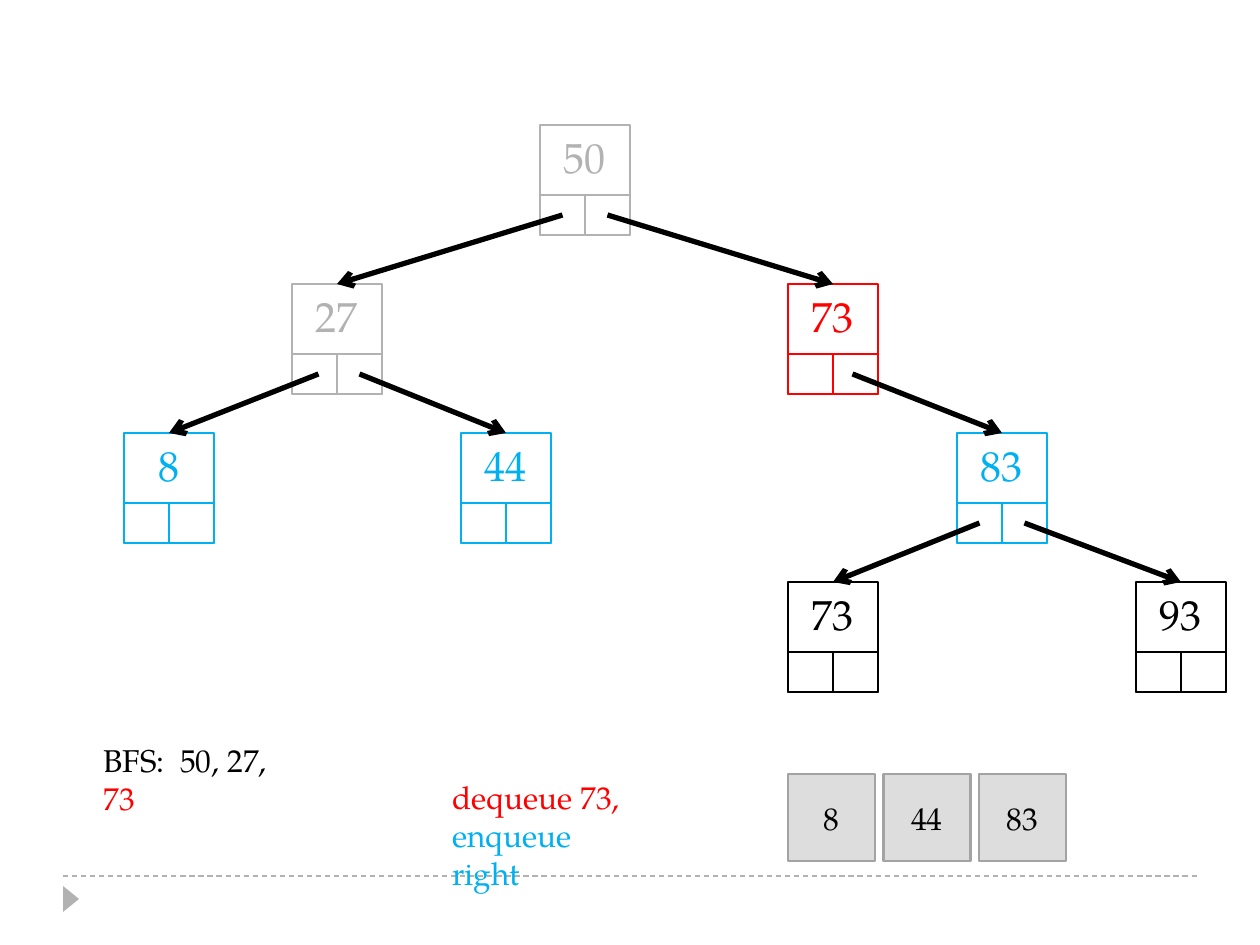
"""Build a slide showing one step of a breadth-first search with its queue."""
import pptx
import pptx.dml.color
import pptx.enum.dml
import pptx.enum.shapes
import pptx.enum.text
import pptx.oxml
import pptx.util

COLORS = {
    "visited": "B2B2B2", "current": "FF0000", "queued": "00B0F0", "waiting": "000000",
    "ink": "000000", "queue_fill": "DDDDDD", "queue_line": "A3A3A3", "footer": "B2B2B2",
}
FONT = "TeX Gyre Pagella"
NODES = {
    "root": ("50", 540, 125, "visited"),
    "left": ("27", 292, 284, "visited"),
    "right": ("73", 788, 284, "current"),
    "left_left": ("8", 124, 433, "queued"),
    "left_right": ("44", 461, 433, "queued"),
    "right_right": ("83", 957, 433, "queued"),
    "leaf_left": ("73", 788, 582, "waiting"),
    "leaf_right": ("93", 1136, 582, "waiting"),
}
LINKS = [
    ("root", 0, "left", 0), ("root", 1, "right", 0),
    ("left", 0, "left_left", 4), ("left", 1, "left_right", 0),
    ("right_right", 0, "leaf_left", 0), ("right", 1, "right_right", -3),
    ("right_right", 1, "leaf_right", 0),
]
QUEUE = ["8", "44", "83"]
NOTES = [
    ((91, 735, 227, 50), [[("BFS:  50, 27, ", "ink"), ("73", "current")]]),
    ((440, 772, 217, 89), [[("dequeue 73,", "current")], [("enqueue right", "queued")]]),
]
NODE_W, NODE_H, POINTER_W, POINTER_H = 90, 110, 45, 40
QUEUE_X, QUEUE_Y, QUEUE_SIZE, QUEUE_STEP = 788, 774, 87, 95.5

SHAPES = pptx.enum.shapes.MSO_SHAPE
ANCHORS = pptx.enum.text.MSO_ANCHOR


def emu(*lengths):
    return [pptx.util.Emu(round(length * 914400 / 126)) for length in lengths]


def rgb(role):
    return pptx.dml.color.RGBColor.from_string(COLORS[role])


def add_run(paragraph, words, size, role):
    run = paragraph.add_run()
    run.text = words
    run.font.name = FONT
    run.font.size = pptx.util.Pt(size)
    run.font.color.rgb = rgb(role)


def add_preset(slide, preset, box, line=None, fill=None):
    shape = slide.shapes.add_shape(preset, *emu(*box))
    shape.shadow.inherit = False
    if fill:
        shape.fill.solid()
        shape.fill.fore_color.rgb = rgb(fill)
    else:
        shape.fill.background()
    if line:
        shape.line.color.rgb = rgb(line)
        shape.line.width = pptx.util.Pt(1.5)
    else:
        shape.line.fill.background()
    return shape


def add_label(shape, words, size, role, anchor):
    shape.text_frame.vertical_anchor = anchor
    paragraph = shape.text_frame.paragraphs[0]
    paragraph.alignment = pptx.enum.text.PP_ALIGN.CENTER
    add_run(paragraph, words, size, role)


def add_line(slide, ends, role, width):
    line = slide.shapes.add_connector(pptx.enum.shapes.MSO_CONNECTOR.STRAIGHT, *emu(*ends))
    line.line.color.rgb = rgb(role)
    line.line.width = pptx.util.Pt(width)
    properties = line._element.spPr
    properties.append(properties.makeelement(pptx.oxml.ns.qn("a:effectLst"), {}))
    return line


def add_node(slide, value, x, y, role):
    node = add_preset(slide, SHAPES.RECTANGLE, (x, y, NODE_W, NODE_H), role)
    add_label(node, value, 24, role, ANCHORS.TOP)
    for side in range(2):
        pointer = (x + side * POINTER_W, y + NODE_H - POINTER_H, POINTER_W, POINTER_H)
        add_preset(slide, SHAPES.RECTANGLE, pointer, role)


def add_link(slide, parent, side, child, nudge):
    _, x, y, _ = NODES[parent]
    _, child_x, child_y, _ = NODES[child]
    start = (x + (side + 0.5) * POINTER_W + nudge, y + NODE_H - POINTER_H / 2)
    arrow = add_line(slide, (*start, child_x + NODE_W / 2, child_y), "ink", 3)
    outline = arrow.line._get_or_add_ln()
    outline.append(outline.makeelement(pptx.oxml.ns.qn("a:tailEnd"), {"type": "arrow"}))


def add_note(slide, box, lines):
    frame = slide.shapes.add_textbox(*emu(*box)).text_frame
    frame.word_wrap = True
    for index, runs in enumerate(lines):
        paragraph = frame.add_paragraph() if index else frame.paragraphs[0]
        for words, role in runs:
            add_run(paragraph, words, 18, role)


def main():
    deck = pptx.Presentation()
    deck.slide_width, deck.slide_height = emu(1260, 945)
    slide = deck.slides.add_slide(deck.slide_layouts[6])

    rule = add_line(slide, (63, 876, 1197, 876), "footer", 0.75)
    rule.line.dash_style = pptx.enum.dml.MSO_LINE.DASH
    marker = add_preset(slide, SHAPES.ISOSCELES_TRIANGLE, (58, 891, 26, 16), fill="footer")
    marker.rotation = 90

    for node in NODES.values():
        add_node(slide, *node)
    for link in LINKS:
        add_link(slide, *link)
    for note in NOTES:
        add_note(slide, *note)
    for index, value in enumerate(QUEUE):
        box = (QUEUE_X + index * QUEUE_STEP, QUEUE_Y, QUEUE_SIZE, QUEUE_SIZE)
        entry = add_preset(slide, SHAPES.RECTANGLE, box, "queue_line", "queue_fill")
        add_label(entry, value, 18, "ink", ANCHORS.MIDDLE)
    deck.save("out.pptx")


if __name__ == "__main__":
    main()
